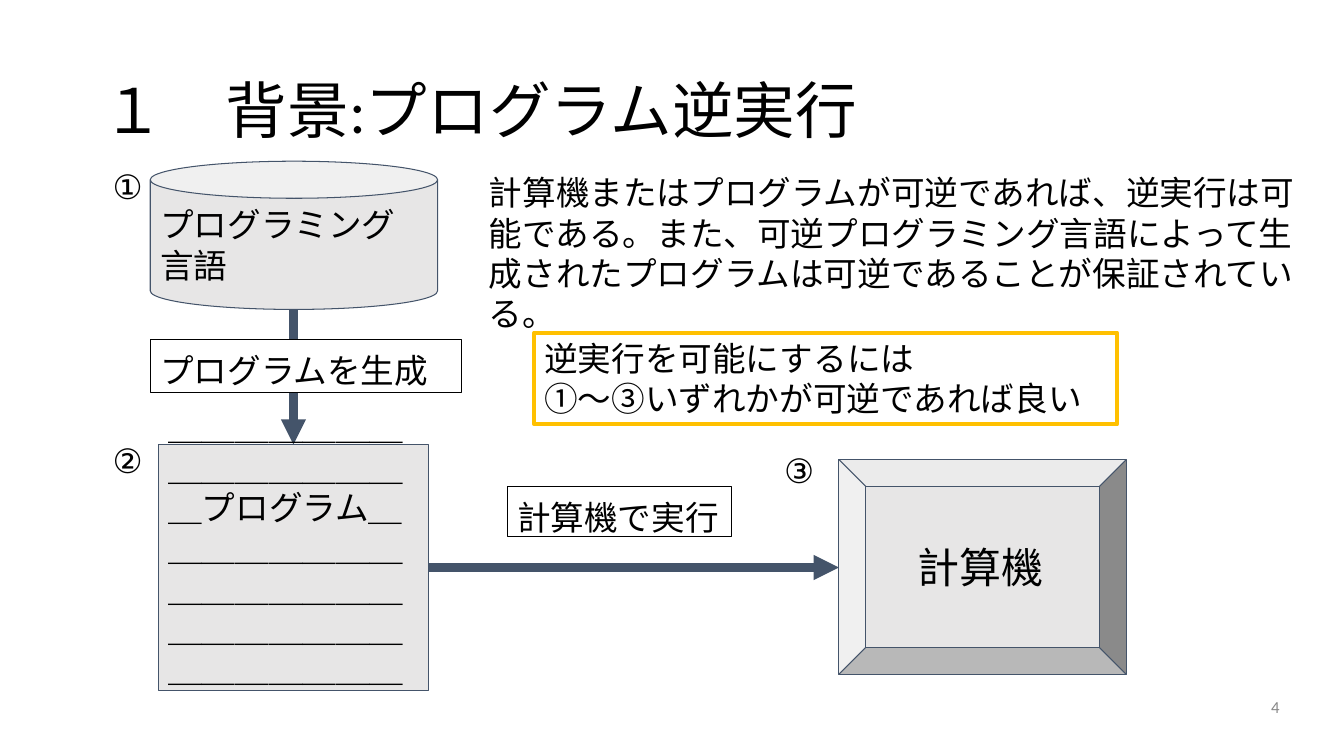
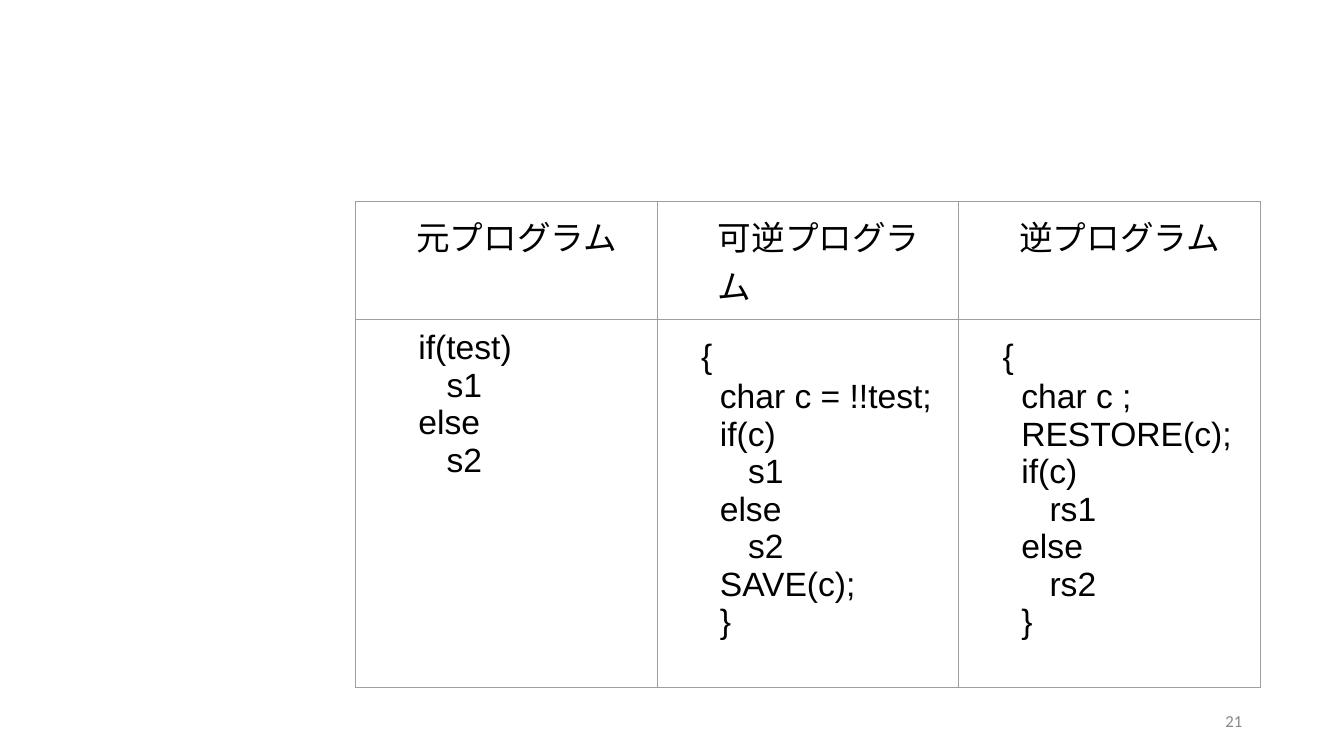
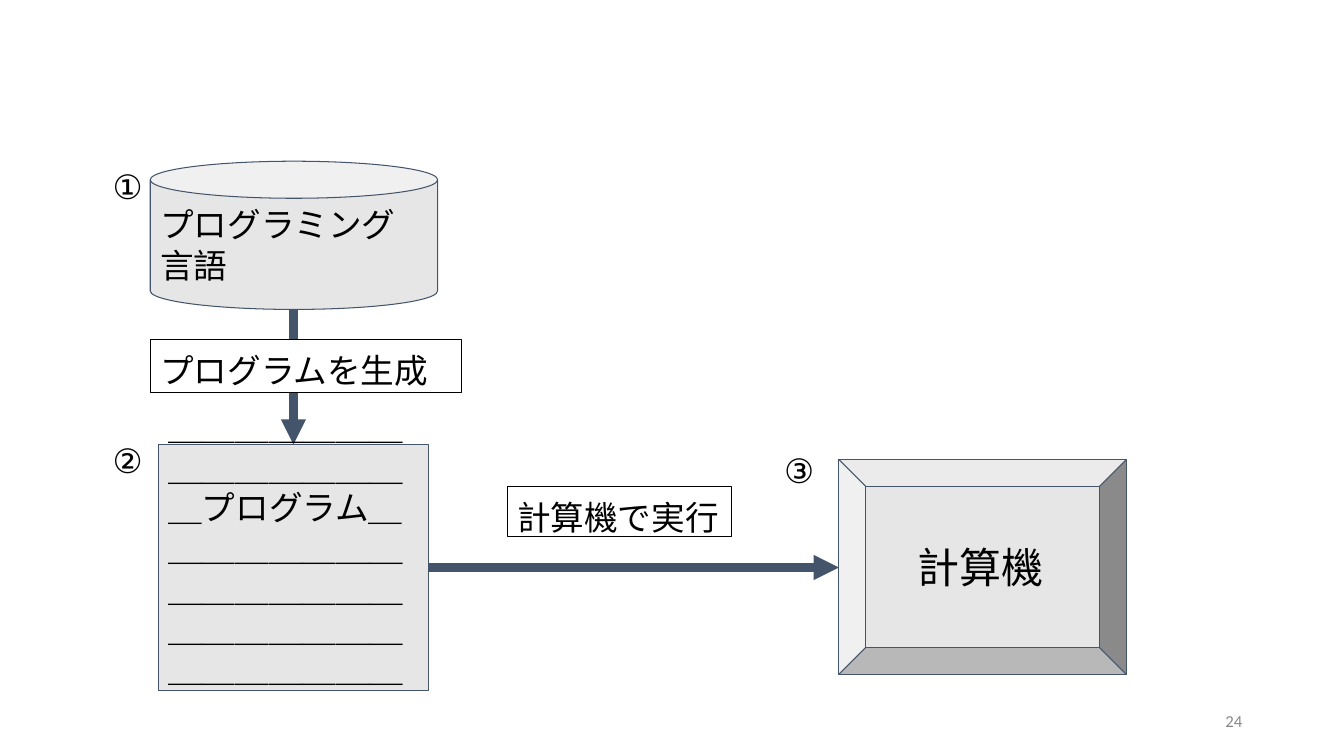
from lxml import etree
from pptx import Presentation
from pptx import util as u
from pptx.dml import color as colors
from pptx.enum import shapes, text
from pptx.oxml import ns

BLACK, WHITE, GRAY, SLATE = "000000", "FFFFFF", "E7E6E6", "44546A"
GOLD, FOOTER, GRID = "FFC000", "888888", "9E9E9E"
SHAPE, ANCHOR = shapes.MSO_SHAPE, text.MSO_ANCHOR
HEADERS = ["元プログラム", "可逆プログラム", "逆プログラム"]
PROGRAMS = [
    ["if(test)", ">s1", "else", ">s2"],
    ["　{", "char c = !!test;", "if(c)", ">s1", "else", ">s2", "SAVE(c);", "}"],
    ["　{", "char c ;", "RESTORE(c);", "if(c)", ">rs1", "else", ">rs2", "}"],
]
CODE_INDENT, NESTED_INDENT = 0.52, 0.8


def paint(target, value):
    target.rgb = colors.RGBColor.from_string(value)


def fill_solid(fill, value):
    fill.solid()
    paint(fill.fore_color, value)


def write(para, content, size=24, font="Arial", color=BLACK, align=text.PP_ALIGN.LEFT,
          indent=0, spacing=None):
    para.alignment = align
    para.line_spacing = spacing
    if indent:
        para._p.get_or_add_pPr().set("marL", str(u.Inches(indent)))
    span = para.add_run()
    span.text = content
    span.font.size = u.Pt(size)
    span.font.name = font
    paint(span.font.color, color)


def fill_frame(frame, lines, anchor=ANCHOR.TOP, pad=0.1, bottom=None, wrap=True, **style):
    frame.word_wrap = wrap
    frame.vertical_anchor = anchor
    frame.margin_left = frame.margin_right = u.Inches(0.1)
    frame.margin_top = u.Inches(pad)
    frame.margin_bottom = u.Inches(pad if bottom is None else bottom)
    for number, line in enumerate(lines):
        para = frame.add_paragraph() if number else frame.paragraphs[0]
        write(para, line, **style)


def add_text(page, place, content, **style):
    box = page.shapes.add_textbox(*map(u.Inches, place))
    fill_frame(box.text_frame, [content], **style)


def add_block(page, kind, place, lines, fill=GRAY, line=SLATE, width=0.75, **style):
    box = page.shapes.add_shape(kind, *map(u.Inches, place))
    box.shadow.inherit = False
    if fill:
        fill_solid(box.fill, fill)
    else:
        box.fill.background()
    paint(box.line.color, line)
    box.line.width = u.Pt(width)
    fill_frame(box.text_frame, lines, **style)


def add_arrow(page, *ends):
    arrow = page.shapes.add_connector(shapes.MSO_CONNECTOR.STRAIGHT, *map(u.Inches, ends))
    paint(arrow.line.color, SLATE)
    arrow.line.width = u.Pt(6)
    etree.SubElement(arrow.line._get_or_add_ln(), ns.qn("a:tailEnd"), type="triangle")
    etree.SubElement(arrow._element.spPr, ns.qn("a:effectLst"))


def add_border(cell):
    properties = cell._tc.get_or_add_tcPr()
    for side in "LRTB":
        line = etree.SubElement(properties, ns.qn("a:ln" + side), w=str(u.Pt(0.75)))
        solid = etree.SubElement(line, ns.qn("a:solidFill"))
        etree.SubElement(solid, ns.qn("a:srgbClr"), val=GRID)


def add_number(page, number, left=9.42, top=6.95):
    add_text(page, (left, top, 3, 0.4), number, size=12, font="Calibri", color=FOOTER,
             align=text.PP_ALIGN.RIGHT, anchor=ANCHOR.MIDDLE, pad=0.05)


def add_diagram(page):
    add_block(page, SHAPE.BEVEL, (8.32, 4.56, 2.85, 2.13), ["　計算機"], size=30,
              anchor=ANCHOR.MIDDLE)
    add_block(page, SHAPE.CAN, (1.49, 1.6, 2.85, 1.47), ["プログラミング言語"],
              anchor=ANCHOR.MIDDLE)
    add_arrow(page, 2.91, 3.07, 2.91, 4.41)
    add_arrow(page, 4.25, 5.63, 8.32, 5.63)
    listing = "＿" * 15 + "プログラム" + "＿" * 29
    add_block(page, SHAPE.RECTANGLE, (1.57, 4.41, 2.68, 2.44), [listing],
              anchor=ANCHOR.MIDDLE, bottom=0.5)
    add_block(page, SHAPE.RECTANGLE, (1.49, 3.37, 3.09, 0.52), ["プログラムを生成"],
              fill=WHITE, line=BLACK, font="Calibri")
    add_block(page, SHAPE.RECTANGLE, (5.03, 4.83, 2.23, 0.49), ["計算機で実行"],
              fill=None, line=BLACK, font="Calibri")
    for mark, left, top in (("①", 1.02, 1.6), ("②", 1.02, 4.32), ("③", 7.68, 4.41)):
        add_text(page, (left, top, 0.37, 0.5), mark, pad=0.05, wrap=False)


def add_background(page):
    add_number(page, "4", 9.79, 6.81)
    add_diagram(page)
    add_text(page, (0.92, 0.4, 11.5, 1.45), "１　背景:プログラム逆実行", size=44,
             font="Calibri", spacing=0.9, anchor=ANCHOR.MIDDLE, pad=0.05)
    add_text(page, (4.75, 1.61, 8.34, 1.47),
             "計算機またはプログラムが可逆であれば、逆実行は可能である。また、"
             "可逆プログラミング言語によって生成されたプログラムは可逆であることが保証されている。",
             font="Calibri")
    add_block(page, SHAPE.RECTANGLE, (5.3, 3.3, 5.78, 0.91),
              ["逆実行を可能にするには", "①～③いずれかが可逆であれば良い"],
              fill=None, line=GOLD, width=3, pad=0.05)


def add_programs(page):
    add_number(page, "21")
    heights = (1.17, 3.65)
    table = page.shapes.add_table(2, 3, *map(u.Inches, (3.53, 2, 8.97, sum(heights)))).table
    table.first_row = table.horz_banding = False
    for row, height in zip(table.rows, heights):
        row.height = u.Inches(height)
    for column, (header, program) in enumerate(zip(HEADERS, PROGRAMS)):
        for row in range(2):
            cell = table.cell(row, column)
            add_border(cell)
            cell.fill.background()
            cell.margin_left = cell.margin_right = u.Inches(0.1)
            cell.margin_top = cell.margin_bottom = u.Inches(0.1)
        write(table.cell(0, column).text_frame.paragraphs[0], header, indent=0.5)
        frame = table.cell(1, column).text_frame
        for number, line in enumerate(program):
            para = frame.add_paragraph() if number else frame.paragraphs[0]
            indent = {"　": 0, ">": NESTED_INDENT}.get(line[0], CODE_INDENT)
            write(para, line.lstrip(">"), indent=indent)


def add_summary(page):
    add_number(page, "24")
    add_diagram(page)


def main():
    deck = Presentation()
    deck.slide_width, deck.slide_height = u.Inches(13.33), u.Inches(7.5)
    for build in (add_background, add_programs, add_summary):
        build(deck.slides.add_slide(deck.slide_layouts[6]))
    deck.save("out.pptx")


if __name__ == "__main__":
    main()
